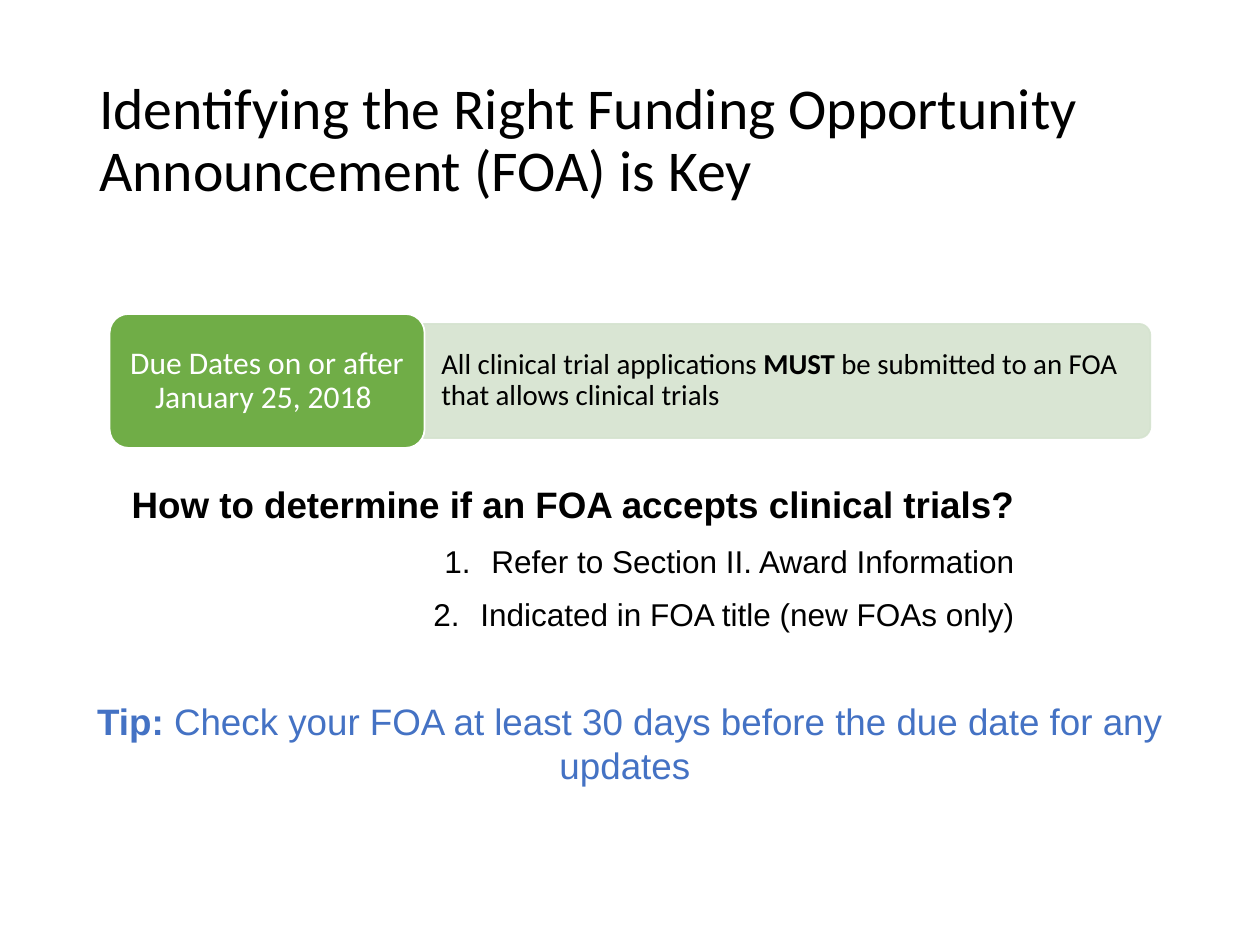
import pptx
import pptx.util
import pptx.dml.color
import pptx.enum.shapes
import pptx.enum.text
import pptx.oxml.ns
from lxml import etree

Cm, Pt = pptx.util.Cm, pptx.util.Pt
ALIGN = pptx.enum.text.PP_ALIGN
ANCHOR = pptx.enum.text.MSO_ANCHOR
ROUNDED = pptx.enum.shapes.MSO_SHAPE.ROUNDED_RECTANGLE


class Theme:
    HEAD, BODY = "Calibri", "Arial"
    BLACK, WHITE, BLUE = "000000", "FFFFFF", "4472C4"
    GREEN, PALE = "70AD47", "D5E3CF"
    TITLE, LARGE, MEDIUM, SMALL = 33, 21, 18, 16.5


def rgb(value):
    return pptx.dml.color.RGBColor.from_string(value)


def child(parent, tag, **attrs):
    return etree.SubElement(parent, pptx.oxml.ns.qn(tag), attrs)


def frame(sp, anchor=ANCHOR.TOP, insets=(0.25, 0.13, 0.25, 0.13)):
    tf = sp.text_frame
    sides = ("margin_left", "margin_top", "margin_right", "margin_bottom")
    formats = {"word_wrap": True, "vertical_anchor": anchor,
               **{side: Cm(n) for side, n in zip(sides, insets)}}
    for name, value in formats.items():
        setattr(tf, name, value)
    return tf


def write(p, runs, font, size, color, **formats):
    """Fill a paragraph with (text, bold) runs."""
    for name, value in formats.items():
        setattr(p, name, value)
    for text, bold in runs:
        r = p.add_run()
        r.text = text
        for name, value in {"name": font, "size": Pt(size), "bold": bold}.items():
            setattr(r.font, name, value)
        r.font.color.rgb = rgb(color)


def number(p, indent):
    pPr = p._p.get_or_add_pPr()
    pPr.set("marL", str(Cm(indent)))
    pPr.set("indent", str(-Cm(indent)))
    child(pPr, "a:buFont", typeface="+mj-lt")
    child(pPr, "a:buAutoNum", type="arabicPeriod")


def rounded(s, x, y, w, h, radius, fill=None, line=None, opacity=None):
    sp = s.shapes.add_shape(ROUNDED, Cm(x), Cm(y), Cm(w), Cm(h))
    sp.adjustments[0] = radius / min(w, h)
    sp.shadow.inherit = False
    if fill:
        sp.fill.solid()
        sp.fill.fore_color.rgb = rgb(fill)
        sp.line.color.rgb = rgb(line)
        sp.line.width = Pt(1)
    else:
        sp.fill.background()
        sp.line.fill.background()
    if opacity:
        for clr in sp._element.spPr.iter(pptx.oxml.ns.qn("a:srgbClr")):
            child(clr, "a:alpha", val=str(opacity * 1000))
    return sp


def add_title(s, x, y, w, h):
    tf = frame(s.shapes.add_textbox(Cm(x), Cm(y), Cm(w), Cm(h)), ANCHOR.MIDDLE)
    text = "Identifying the Right Funding Opportunity Announcement (FOA) is Key"
    write(tf.paragraphs[0], [(text, False)], Theme.HEAD, Theme.TITLE,
          Theme.BLACK, line_spacing=0.9)


def add_due_date(s, x, y, w, h):
    # Pale rule panel, tucked under the green label
    label_w, overlap, inset = 6.35, 0.23, 0.2
    left = label_w - overlap
    panel = rounded(s, x + left, y + inset, w - left, h - 2 * inset, 0.23,
                    Theme.PALE, Theme.PALE, 90)
    tf = frame(panel, ANCHOR.MIDDLE, (0.5, 0.33, 0.58, 0.33))
    runs = [("All clinical trial applications ", False), ("MUST", True),
            (" be submitted to an FOA that allows clinical trials", False)]
    write(tf.paragraphs[0], runs, Theme.HEAD, Theme.SMALL, Theme.BLACK,
          alignment=ALIGN.LEFT, line_spacing=0.9)

    # Green date label
    label = rounded(s, x, y, label_w, h, 0.38, Theme.GREEN, Theme.WHITE)
    tf = frame(label, ANCHOR.MIDDLE, (0.25, 0.18, 0.25, 0.18))
    write(tf.paragraphs[0], [("Due Dates on or after January 25, 2018 ", False)],
          Theme.HEAD, Theme.MEDIUM, Theme.WHITE,
          alignment=ALIGN.CENTER, line_spacing=0.9)


def add_steps(s, x, y, w, h):
    tf = frame(s.shapes.add_textbox(Cm(x), Cm(y), Cm(w), Cm(h)))
    question = "How to determine if an FOA accepts clinical trials?"
    write(tf.paragraphs[0], [(question, True)], Theme.BODY, Theme.LARGE,
          Theme.BLACK, alignment=ALIGN.RIGHT, space_before=Pt(6.8))
    for step in ("Refer to Section II. Award Information",
                 "Indicated in FOA title (new FOAs only)"):
        p = tf.add_paragraph()
        write(p, [(step, False)], Theme.BODY, Theme.MEDIUM, Theme.BLACK,
              alignment=ALIGN.RIGHT, space_before=Pt(9))
        number(p, 0.95)


def add_tip(s, x, y, w, h):
    tf = frame(rounded(s, x, y, w, h, 0.38))
    tip = "Check your FOA at least 30 days before the due date for any updates "
    write(tf.paragraphs[0], [("Tip: ", True), (tip, False)], Theme.BODY,
          Theme.LARGE, Theme.BLUE, alignment=ALIGN.CENTER)


def main():
    prs = pptx.Presentation()
    prs.slide_width, prs.slide_height = Cm(25.4), Cm(19.05)
    s = prs.slides.add_slide(prs.slide_layouts[6])
    add_title(s, 1.75, 1.02, 21.9, 3.68)
    add_steps(s, 2.26, 9.58, 18.44, 4.34)
    add_tip(s, 0.66, 13.84, 24.08, 2.26)
    add_due_date(s, 2.21, 6.33, 20.98, 2.7)
    prs.save("out.pptx")


if __name__ == "__main__":
    main()
